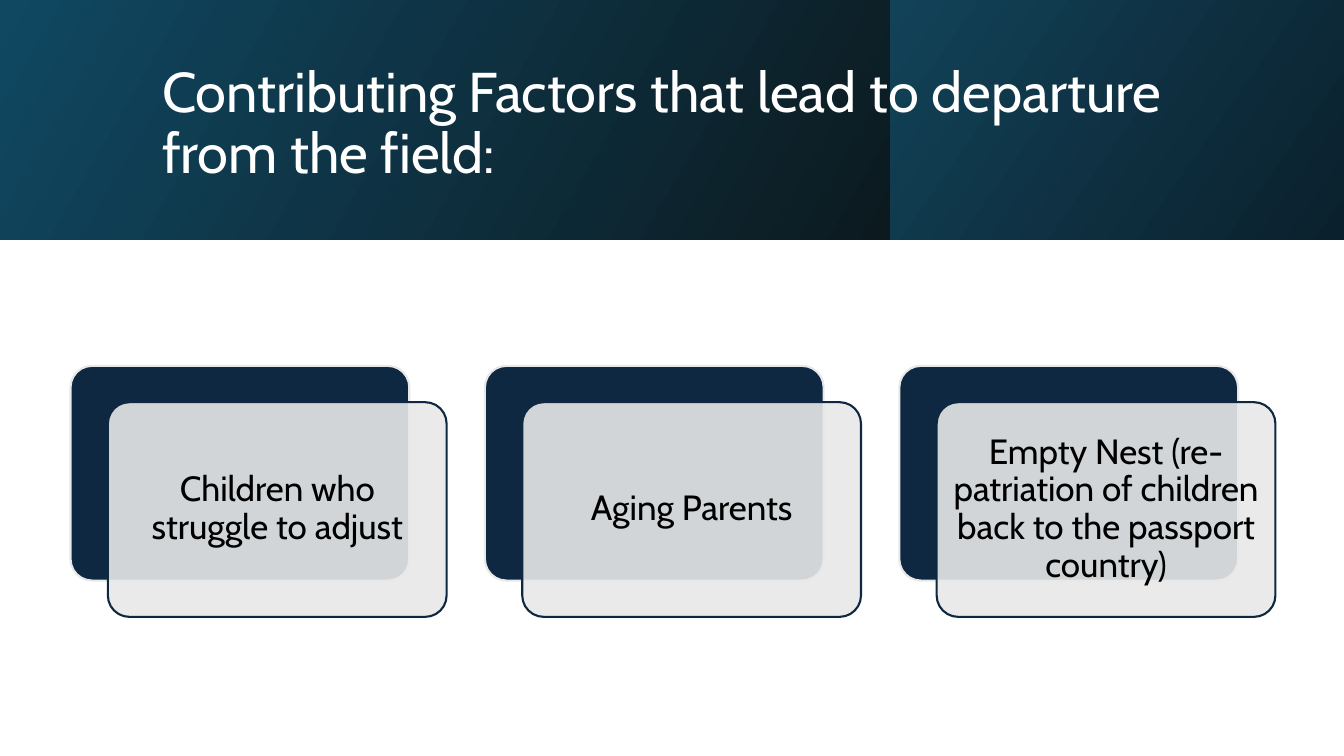
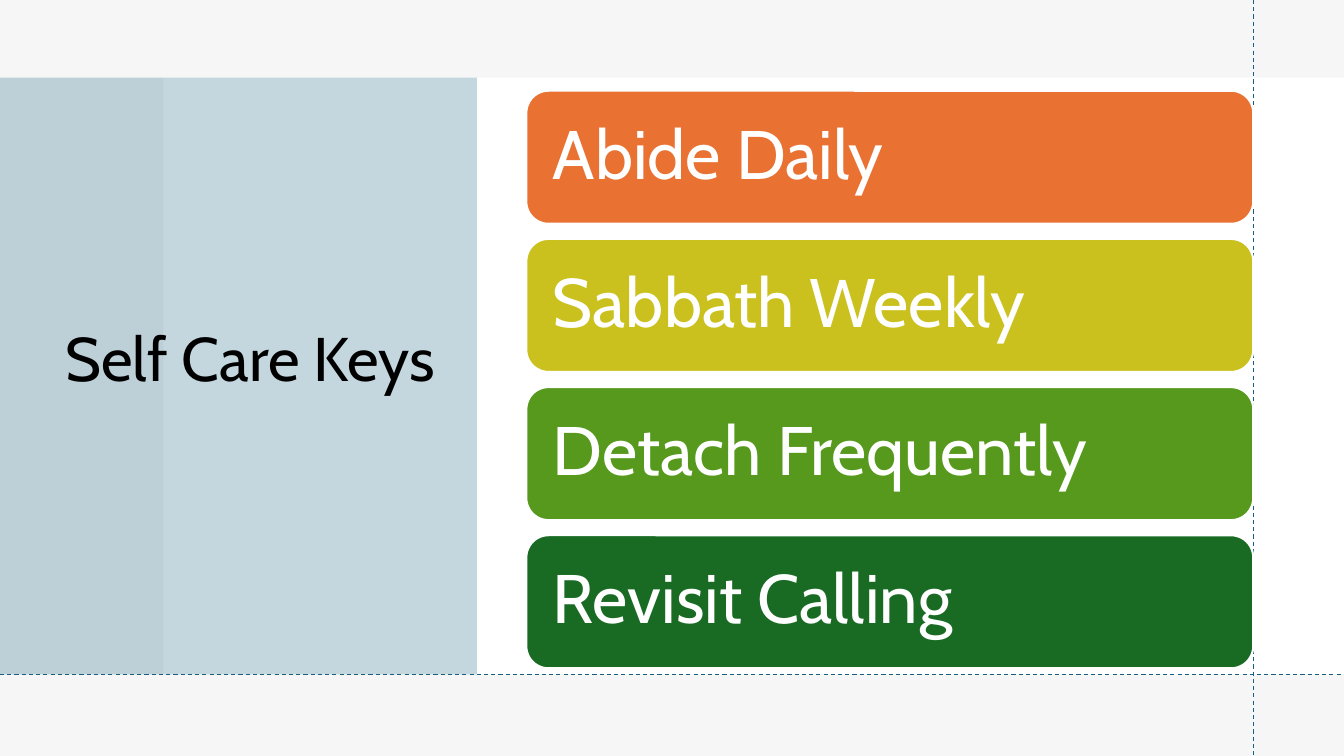
from lxml import etree
from pptx import Presentation
from pptx.dml.color import RGBColor
from pptx.enum.dml import MSO_LINE
from pptx.enum.shapes import MSO_CONNECTOR, MSO_SHAPE
from pptx.enum.text import MSO_ANCHOR, PP_ALIGN
from pptx.oxml.ns import qn
from pptx.util import Emu, Pt

PX = 9144  # 100 px to the inch
WIDTH, HEIGHT = 1333, 750
FONT = "Cabin"

RECT, ROUND = MSO_SHAPE.RECTANGLE, MSO_SHAPE.ROUNDED_RECTANGLE
STRAIGHT, DASH = MSO_CONNECTOR.STRAIGHT, MSO_LINE.DASH
MIDDLE = MSO_ANCHOR.MIDDLE
LEFT, CENTER = PP_ALIGN.LEFT, PP_ALIGN.CENTER

WHITE = RGBColor(0xFF, 0xFF, 0xFF)
BLACK = RGBColor(0x00, 0x00, 0x00)
NAVY = RGBColor(0x0E, 0x28, 0x41)
GREY = RGBColor(0xE8, 0xE8, 0xE8)
PALE = RGBColor(0xF6, 0xF6, 0xF6)
TEAL = RGBColor(0x15, 0x60, 0x82)
HEADER_LEFT = (RGBColor(0x10, 0x48, 0x62), RGBColor(0x0C, 0x1A, 0x20))
HEADER_RIGHT = (RGBColor(0x12, 0x42, 0x58), RGBColor(0x0B, 0x20, 0x2D))
ORANGE = RGBColor(0xE9, 0x71, 0x32)
OLIVE = RGBColor(0xCB, 0xC1, 0x1E)
LIME = RGBColor(0x56, 0x99, 0x1D)
GREEN = RGBColor(0x19, 0x6B, 0x24)

FACTORS = (
    "Children who struggle to adjust",
    "Aging Parents",
    "Empty Nest (re-patriation of children back to the passport country)",
)
KEYS = (
    ("Abide Daily", ORANGE),
    ("Sabbath Weekly", OLIVE),
    ("Detach Frequently", LIME),
    ("Revisit Calling", GREEN),
)


def emu(*lengths):
    return [Emu(n * PX) for n in lengths]


def add_box(slide, kind, box, fill=None, line=None, alpha=None, radius=None):
    """Add a preset shape; alpha is the fill's opacity in percent."""
    s = slide.shapes.add_shape(kind, *emu(*box))
    s.shadow.inherit = False
    if radius is not None:
        s.adjustments[0] = radius
    if fill is not None:
        s.fill.solid()
        s.fill.fore_color.rgb = fill
    if alpha is not None:
        color = s.fill._xPr.find(qn("a:solidFill"))[0]
        etree.SubElement(color, qn("a:alpha")).set("val", str(alpha * 1000))
    if line is None:
        s.line.fill.background()
    else:
        s.line.color.rgb = line
        s.line.width = Pt(1.5)
    return s


def add_gradient(slide, box, colors, angle):
    s = add_box(slide, RECT, box)
    s.fill.gradient()
    s.fill.gradient_angle = angle
    for stop, color in zip(s.fill.gradient_stops, colors):
        stop.color.rgb = color


def write(s, text, size, color, align=LEFT, inset=10):
    tf = s.text_frame
    tf.word_wrap = True
    tf.vertical_anchor = MIDDLE
    tf.margin_left, tf.margin_top, tf.margin_right, tf.margin_bottom = emu(*[inset] * 4)
    p = tf.paragraphs[0]
    p.alignment = align
    p.line_spacing = 0.9
    r = p.add_run()
    r.text = text
    r.font.name = FONT
    r.font.size = Pt(size)
    r.font.color.rgb = color


def add_title(slide, box, text, size, color):
    write(slide.shapes.add_textbox(*emu(*box)), text, size, color)


def add_guide(slide, x1, y1, x2, y2):
    c = slide.shapes.add_connector(STRAIGHT, *emu(x1, y1, x2, y2))
    c.line.color.rgb = TEAL
    c.line.width = Pt(0.75)
    c.line.dash_style = DASH
    etree.SubElement(c._element.spPr, qn("a:effectLst"))


def add_header(slide, box, split):
    """Fill a band with two gradients that meet at the given x offset."""
    x, y, w, h = box
    add_gradient(slide, (x, y, split, h), HEADER_LEFT, 330)
    add_gradient(slide, (x + split, y, w - split, h), HEADER_RIGHT, 325)


def add_factor_cards(slide, box):
    x, y, w, h = box
    shift_x, shift_y, card_w = 37, 36, 336
    card_h = h - shift_y
    pitch = (w - card_w - shift_x) // (len(FACTORS) - 1)
    for i, text in enumerate(FACTORS):
        left = x + i * pitch
        add_box(slide, ROUND, (left, y, card_w, card_h), NAVY, GREY, radius=0.1)
        front = add_box(slide, ROUND, (left + shift_x, y + shift_y, card_w, card_h),
                        GREY, NAVY, alpha=90, radius=0.1)
        write(front, text, 25, BLACK, CENTER)


def add_key_bars(slide, box):
    x, y, w, h = box
    gap = 15
    bar_h = (h - gap * (len(KEYS) - 1)) // len(KEYS)
    for i, (text, color) in enumerate(KEYS):
        bar = add_box(slide, ROUND, (x, y + i * (bar_h + gap), w, bar_h), color, WHITE)
        write(bar, text, 49, WHITE, inset=20)


def build_factors(slide):
    add_header(slide, (0, 0, WIDTH, 238), 883)
    add_title(slide, (151, 38, 1063, 172),
              "Contributing Factors that lead to departure from the field:", 40, WHITE)
    add_factor_cards(slide, (70, 363, 1195, 249))


def build_keys(slide):
    slide.background.fill.solid()
    slide.background.fill.fore_color.rgb = PALE
    top, bottom, guide_x = 77, 669, 1243
    height = bottom - top
    add_box(slide, RECT, (162, top, WIDTH - 162, height), WHITE)
    add_box(slide, RECT, (0, top, 473, height), TEAL, alpha=25)
    add_title(slide, (55, 74, 395, 569), "Self Care Keys", 44, BLACK)
    add_guide(slide, guide_x, 0, guide_x, HEIGHT)
    add_guide(slide, 0, bottom, WIDTH, bottom)
    add_key_bars(slide, (522, 90, guide_x - 522, 573))


def main():
    prs = Presentation()
    prs.slide_width, prs.slide_height = emu(WIDTH, HEIGHT)
    for build in (build_factors, build_keys):
        build(prs.slides.add_slide(prs.slide_layouts[6]))
    prs.save("out.pptx")


if __name__ == "__main__":
    main()
